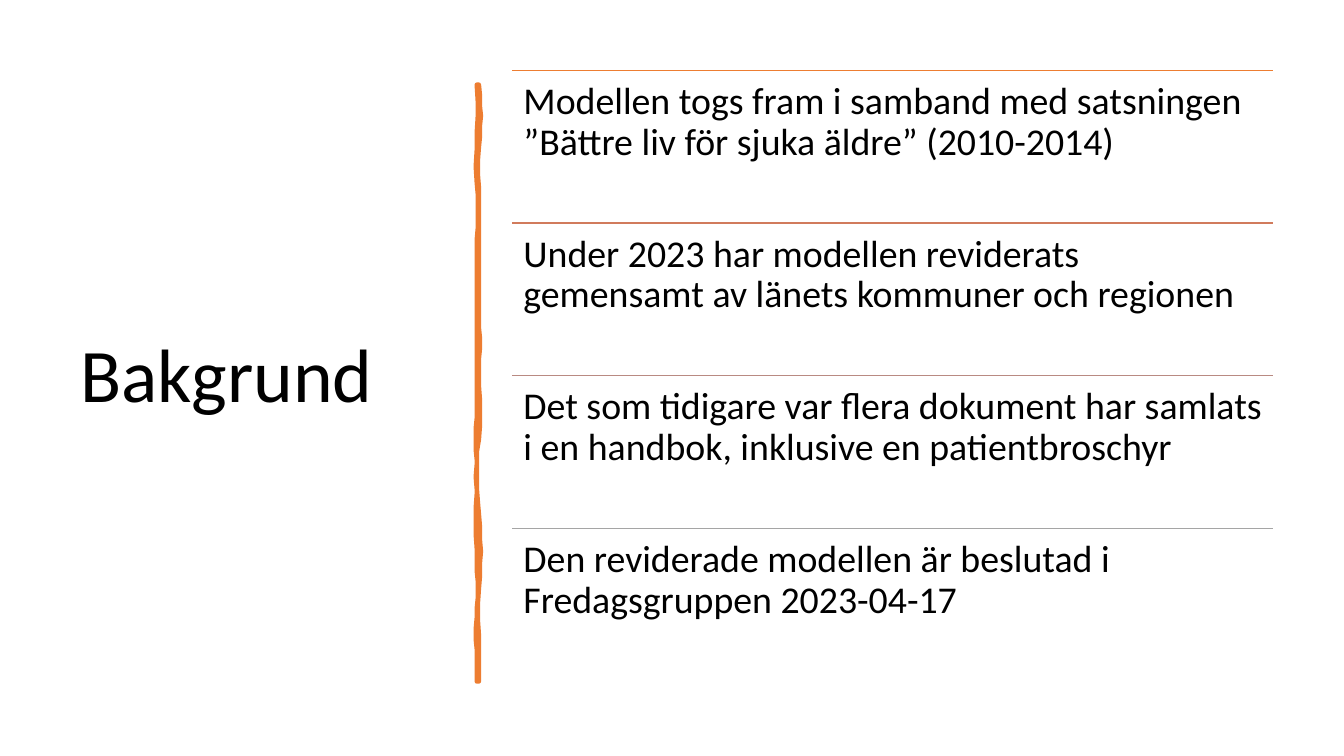
from dataclasses import dataclass

from lxml import etree
from pptx import Presentation
from pptx.dml.color import RGBColor
from pptx.enum import shapes, text
from pptx.util import Pt


@dataclass(frozen=True)
class Theme:
    font: str = "Calibri"
    ink: str = "000000"
    accent: str = "ED7D31"
    rules: tuple = ("ED7D31", "D17B5C", "B98A82", "A5A5A5")
    title: float = 54
    body: float = 27


THEME = Theme()
ITEMS = (
    "Modellen togs fram i samband med satsningen ”Bättre liv för sjuka äldre” (2010-2014)",
    "Under 2023 har modellen reviderats gemensamt av länets kommuner och regionen",
    "Det som tidigare var flera dokument har samlats i en handbok, inklusive en patientbroschyr",
    "Den reviderade modellen är beslutad i Fredagsgruppen 2023-04-17",
)
# Brush edges: two sideways bows and the end height of each curve, in 0.72 pt units
RIGHT = ((2, 2, 62), (-2, 1, 142), (-1, 0, 210), (-1, 2, 272), (-2, 4, 352),
         (-4, -3, 426), (2, 2, 500), (-2, 1, 592))
LEFT = ((1, -2, 529), (1, 1, 473), (-1, -1, 393), (0, -2, 331), (1, -1, 251),
        (1, -1, 166), (1, 2, 97), (-3, 4, 0))


def write(frame, words, size, **look):
    """Fill a text frame with one left-aligned paragraph."""
    for key, val in look.items():
        setattr(frame, key, val)
    frame.word_wrap = True
    frame.auto_size = text.MSO_AUTO_SIZE.NONE
    para = frame.paragraphs[0]
    para.alignment = text.PP_ALIGN.LEFT
    para.line_spacing = 0.9
    run = para.add_run()
    run.text = words
    for key, val in {"name": THEME.font, "size": Pt(size)}.items():
        setattr(run.font, key, val)
    run.font.color.rgb = RGBColor.from_string(THEME.ink)


def head(slide, x, y, w, h):
    """Title on the left."""
    title = slide.shapes.title
    for key, val in {"left": x, "top": y, "width": w, "height": h}.items():
        setattr(title, key, Pt(val))
    write(title.text_frame, "Bakgrund", THEME.title,
          vertical_anchor=text.MSO_ANCHOR.MIDDLE)


def edge(side, base, start, steps=6):
    """Points along one wavy edge of the brush stroke."""
    points = []
    for one, two, end in side:
        for n in range(1, steps + 1):
            t = n / steps
            bow = 3 * t * (1 - t) * ((1 - t) * one + t * two)
            points.append((base + bow, start + t * (end - start)))
        start = end
    return points


def brush(slide, x, y):
    """Hand-drawn upright divider."""
    form = slide.shapes.build_freeform(2, 0, scale=float(Pt(0.72)))
    form.add_line_segments(edge(RIGHT, 2, 0) + [(0, 592)] + edge(LEFT, 0, 592))
    shape = form.convert_to_shape(Pt(x), Pt(y))
    shape.shadow.inherit = False
    color = RGBColor.from_string(THEME.accent)
    shape.fill.solid()
    shape.fill.fore_color.rgb = color
    shape.line.color.rgb = color
    shape.line.width = Pt(3.25)
    ln = shape.line.fill._xPr
    etree.SubElement(ln, ln.tag.replace("}ln", "}round"))


def rule(slide, x, y, w, color):
    """Thin line above an item."""
    line = slide.shapes.add_connector(
        shapes.MSO_CONNECTOR.STRAIGHT, Pt(x), Pt(y), Pt(x + w), Pt(y))
    line.line.color.rgb = RGBColor.from_string(color)
    line.line.width = Pt(1)
    props = line._element.spPr
    etree.SubElement(props, props.ln.tag.replace("}ln", "}effectLst"))


def points(slide, x, y, w, h):
    """Equal rows, each with a rule and a statement."""
    step = h / len(ITEMS)
    pad = dict.fromkeys(
        ("margin_left", "margin_top", "margin_right", "margin_bottom"), Pt(8.1))
    for row, (words, color) in enumerate(zip(ITEMS, THEME.rules)):
        top = y + row * step
        rule(slide, x, top, w, color)
        box = slide.shapes.add_textbox(Pt(x), Pt(top), Pt(w), Pt(step))
        write(box.text_frame, words, THEME.body, **pad)


def main():
    deck = Presentation()
    deck.slide_width, deck.slide_height = Pt(960), Pt(540)
    slide = deck.slides.add_slide(deck.slide_layouts[5])
    head(slide, 50, 50.3, 269, 440)
    brush(slide, 340.6, 60.5)
    points(slide, 365.8, 50.3, 543.6, 436)
    deck.save("out.pptx")


if __name__ == "__main__":
    main()
